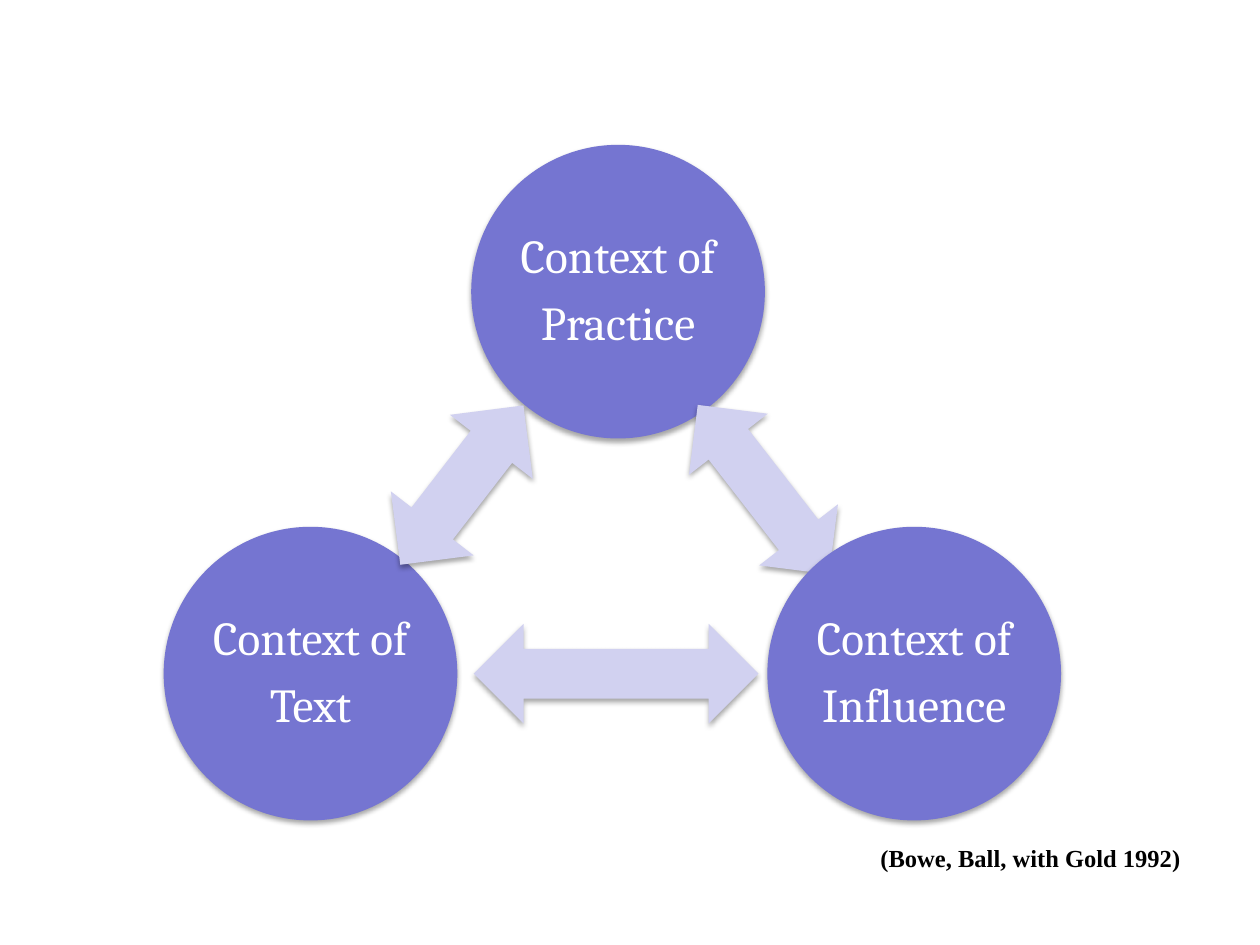
import pptx
import pptx.dml.color
import pptx.enum.shapes
import pptx.enum.text
import pptx.oxml
import pptx.oxml.ns
import pptx.util
from pptx.util import Cm

RGB = pptx.dml.color.RGBColor
SHAPE = pptx.enum.shapes.MSO_SHAPE
CIRCLE_FILL = RGB(0x75, 0x75, 0xD1)
ARROW_FILL = RGB(0xD1, 0xD1, 0xF0)
WHITE = RGB(0xFF, 0xFF, 0xFF)
BLACK = RGB(0, 0, 0)

DIAMETER = 5.92
SHADOW = (
    f'<a:effectLst {pptx.oxml.ns.nsdecls("a")}>'
    '<a:outerShdw blurRad="39370" dist="22860" dir="5400000" rotWithShape="0">'
    '<a:srgbClr val="000000"><a:alpha val="35000"/></a:srgbClr>'
    '</a:outerShdw></a:effectLst>'
)


def add_run(p, text, font, size, color, bold=False):
    r = p.add_run()
    r.text = text
    r.font.name = font
    r.font.size = pptx.util.Pt(size)
    r.font.color.rgb = color
    r.font.bold = bold


def add_centred_shape(slide, kind, x, y, width, height, fill):
    """Add a borderless shape with a soft shadow, centred on x, y (cm)."""
    sp = slide.shapes.add_shape(
        kind, Cm(x - width / 2), Cm(y - height / 2), Cm(width), Cm(height))
    sp.fill.solid()
    sp.fill.fore_color.rgb = fill
    sp.line.fill.background()
    sp._element.spPr.append(pptx.oxml.parse_xml(SHADOW))
    return sp


def add_context(slide, x, y, name):
    sp = add_centred_shape(slide, SHAPE.OVAL, x, y, DIAMETER, DIAMETER, CIRCLE_FILL)
    tf = sp.text_frame
    tf.word_wrap = True
    tf.vertical_anchor = pptx.enum.text.MSO_ANCHOR.MIDDLE
    tf.margin_left = tf.margin_right = tf.margin_top = tf.margin_bottom = Cm(0.1)
    for i, line in enumerate(("Context of", name)):
        p = tf.add_paragraph() if i else tf.paragraphs[0]
        p.alignment = pptx.enum.text.PP_ALIGN.CENTER
        p.line_spacing = 0.9
        p.space_after = pptx.util.Pt(9.45)
        add_run(p, line, "Cambria", 27, WHITE)


def add_arrow(slide, kind, x, y, width, height, rotation):
    sp = add_centred_shape(slide, kind, x, y, width, height, ARROW_FILL)
    sp.rotation = rotation


def add_citation(slide, text):
    sp = slide.shapes.add_textbox(Cm(17.5), Cm(16.87), Cm(6.6), Cm(0.86))
    tf = sp.text_frame
    tf.word_wrap = False
    tf.auto_size = pptx.enum.text.MSO_AUTO_SIZE.SHAPE_TO_FIT_TEXT
    add_run(tf.paragraphs[0], text, "Times New Roman", 14, BLACK, bold=True)


def main():
    prs = pptx.Presentation()
    prs.slide_width, prs.slide_height = Cm(25.4), Cm(19.05)
    slide = prs.slides.add_slide(prs.slide_layouts[6])

    # Cycle: each context is followed by the arrow to the next one
    add_context(slide, 12.46, 5.88, "Practice")
    add_arrow(slide, SHAPE.LEFT_RIGHT_ARROW, 15.39, 9.87, 4.32, 2.01, 52.2)
    add_context(slide, 18.43, 13.58, "Influence")
    add_arrow(slide, SHAPE.LEFT_RIGHT_ARROW, 12.42, 13.58, 5.74, 2.01, 180)
    add_context(slide, 6.26, 13.58, "Text")
    add_arrow(slide, SHAPE.UP_DOWN_ARROW, 9.31, 9.78, 2.11, 4.06, 37.7)

    # Source of the model
    add_citation(slide, "(Bowe, Ball, with Gold 1992)")
    prs.save("out.pptx")


if __name__ == "__main__":
    main()
